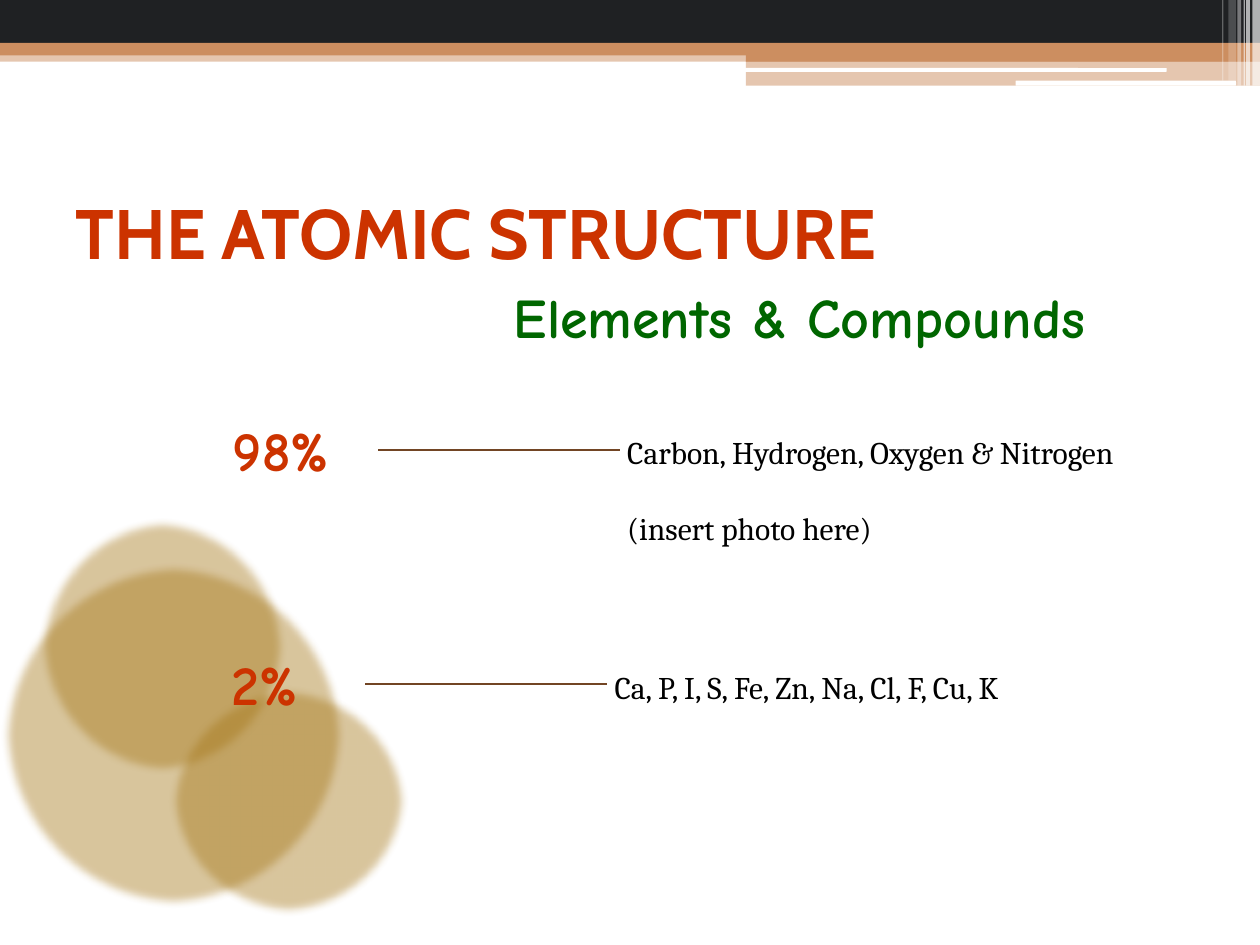
from lxml import etree
from pptx import Presentation
from pptx.dml.color import RGBColor
from pptx.enum.shapes import MSO_CONNECTOR, MSO_SHAPE
from pptx.enum.text import MSO_ANCHOR, MSO_AUTO_SIZE, PP_ALIGN
from pptx.oxml.ns import qn
from pptx.util import Inches, Pt

RECTANGLE = MSO_SHAPE.RECTANGLE
ROUNDED = MSO_SHAPE.ROUNDED_RECTANGLE
OVAL = MSO_SHAPE.OVAL
STRAIGHT = MSO_CONNECTOR.STRAIGHT
MIDDLE = MSO_ANCHOR.MIDDLE
LEFT = PP_ALIGN.LEFT
NO_FIT = MSO_AUTO_SIZE.NONE

COLUMNS, ROWS = 100, 75
COLORS = {
    "white": "FFFFFF", "black": "000000", "charcoal": "1F2123",
    "copper": "CC8E60", "ochre": "A57617", "brown": "724524",
    "red": "CC3300", "green": "006600",
}
FONTS = {"title": "Cabin", "body": "Cambria", "accent": "Comic Neue"}

BANDS = [
    (RECTANGLE, (0, 4, 100, 0.9), "copper", 50),
    (RECTANGLE, (0, 0, 100, 3.4), "charcoal", 100),
    (RECTANGLE, (0, 3.4, 100, 1), "copper", 100),
    (RECTANGLE, (59.2, 3.9, 40.8, 1), "copper", 100),
    (RECTANGLE, (59.2, 4.8, 40.8, 2), "copper", 50),
    (ROUNDED, (59.1, 5.4, 33.5, 0.3), "white", 100),
    (ROUNDED, (80.6, 6.4, 17.5, 0.4), "white", 100),
]
STRIPES = [
    (99.4, 0.6, 6.8, 65), (98.9, 0.3, 6.8, 65), (98.7, 0.1, 6.8, 60),
    (98.2, 0.3, 6.8, 40), (97.5, 0.6, 6.4, 20), (97, 0.1, 6.4, 30),
]
CIRCLES = [(0, 44.6, 27.5, 27.5), (13.3, 54.3, 19.2, 18.5), (2.9, 41, 20, 20.6)]
SHARES = [
    ("98%", 17.5, 30, 35.7, ["Carbon, Hydrogen, Oxygen & Nitrogen", "(insert photo here)"]),
    ("2%", 17.4, 29, 54.3, ["Ca, P, I, S, Fe, Zn, Na, Cl, F, Cu, K"]),
]


class SlideBuilder:
    def __init__(self, presentation):
        self.column = presentation.slide_width / COLUMNS
        self.row = presentation.slide_height / ROWS
        self.slide = presentation.slides.add_slide(presentation.slide_layouts[5])

    def place(self, left, top, width, height):
        return (round(left * self.column), round(top * self.row),
                round(width * self.column), round(height * self.row))

    def color(self, name):
        return RGBColor.from_string(COLORS[name])

    def format(self, paragraph, font, size, color, bold):
        for run in paragraph.runs:
            run.font.name = FONTS[font]
            run.font.size = Pt(size)
            run.font.bold = bold
            run.font.color.rgb = self.color(color)

    def title(self, text, box):
        title = self.slide.shapes.title
        title.left, title.top, title.width, title.height = self.place(*box)
        frame = title.text_frame
        frame.text = text
        frame.auto_size = NO_FIT
        frame.vertical_anchor = MIDDLE
        frame.paragraphs[0].alignment = LEFT
        self.format(frame.paragraphs[0], "title", 40, "red", True)

    def shape(self, kind, box, color, opacity=100, soft_edge=0):
        shape = self.slide.shapes.add_shape(kind, *self.place(*box))
        shape.shadow.inherit = False
        shape.line.fill.background()
        shape.fill.solid()
        shape.fill.fore_color.rgb = self.color(color)
        properties = shape.element.spPr
        if opacity < 100:
            fill = properties.find(".//" + qn("a:srgbClr"))
            etree.SubElement(fill, qn("a:alpha"), val=str(opacity * 1000))
        if soft_edge:
            effects = properties.find(qn("a:effectLst"))
            etree.SubElement(effects, qn("a:softEdge"), rad=str(Pt(soft_edge)))

    def text(self, lines, box, font, size, color, bold=False):
        frame = self.slide.shapes.add_textbox(*self.place(*box)).text_frame
        frame.word_wrap = True
        frame.text = "\n".join(lines)
        for paragraph in frame.paragraphs:
            self.format(paragraph, font, size, color, bold)
        for paragraph in frame.paragraphs[1:]:
            paragraph.space_before = Pt(21.5)

    def line(self, left, top, width):
        x, y, length, _ = self.place(left, top, width, 0)
        line = self.slide.shapes.add_connector(STRAIGHT, x, y, x + length, y)
        line.line.color.rgb = self.color("brown")
        line.line.width = Pt(1)
        etree.SubElement(line.element.spPr, qn("a:effectLst"))

    def share(self, percentage, label_left, line_left, middle, lines):
        self.line(line_left, middle, 19.2)
        height = 10.1 if len(lines) > 1 else 4
        self.text(lines, (line_left + 18.8, middle - 1.8, 45.3, height), "body", 18, "black")
        self.text([percentage], (label_left, middle - 3.2, 14.4, 6.4), "accent", 32, "red", True)


def main():
    presentation = Presentation()
    presentation.slide_width, presentation.slide_height = Inches(10), Inches(7.5)
    builder = SlideBuilder(presentation)
    for kind, box, color, opacity in BANDS:
        builder.shape(kind, box, color, opacity)
    for left, width, height, opacity in STRIPES:
        builder.shape(RECTANGLE, (left, 0, width, height), "white", opacity)
    for box in CIRCLES:
        builder.shape(OVAL, box, "ochre", 42, soft_edge=5)
    builder.title("THE ATOMIC STRUCTURE", (5, 12.5, 90, 11.7))
    for share in SHARES:
        builder.share(*share)
    builder.text(["Elements & Compounds"], (39.8, 21.9, 59.4, 6.4), "accent", 32, "green", True)
    presentation.save("out.pptx")


if __name__ == "__main__":
    main()
